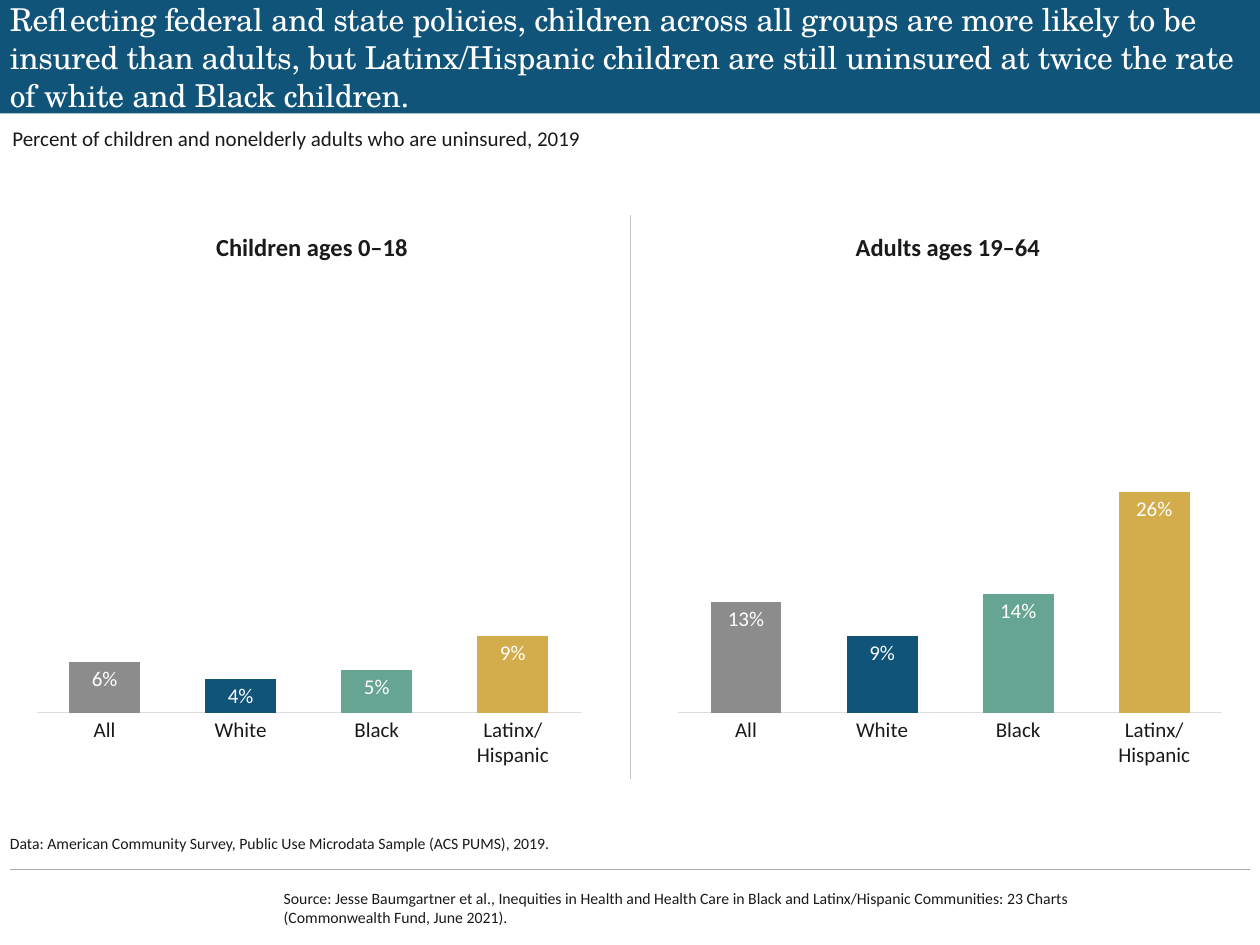
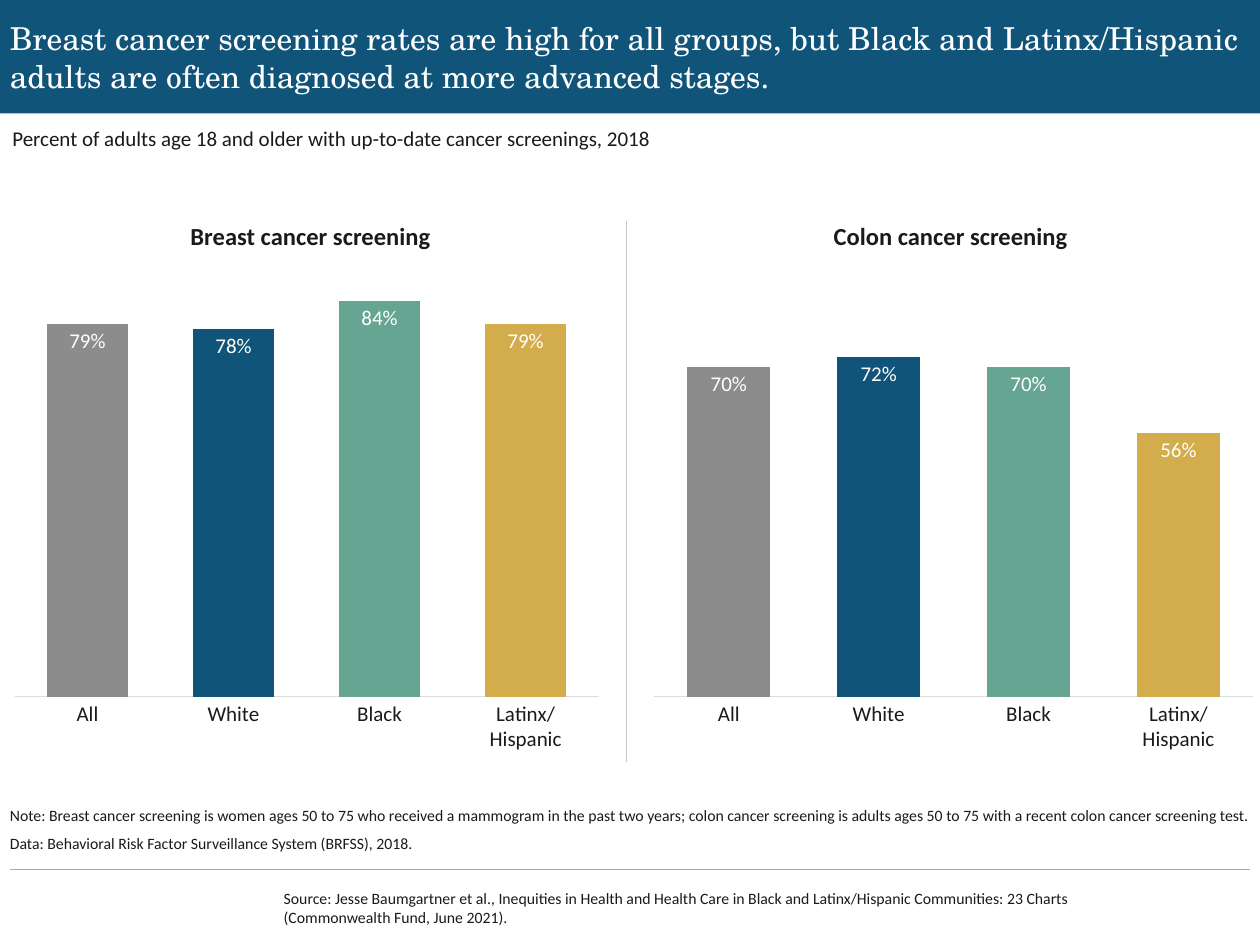
from lxml import etree
from pptx import Presentation
from pptx import util as u
from pptx.chart import data as chart_data
from pptx.dml import color
from pptx.enum import chart as charts, shapes, text
from pptx.oxml import ns

COLORS = {
    "blue": "115479",
    "gray": "8C8C8C",
    "green": "65A591",
    "gold": "D3AC4C",
    "ink": "1A1A1A",
    "white": "FFFFFF",
    "rule": "ABABAB",
    "divider": "C6C6C6",
    "axis": "DDDDDD",
}
GROUPS = {"All": "gray", "White": "blue", "Black": "green", "Latinx/\nHispanic": "gold"}
BODY_FONT = "Calibri"
TITLE_FONT = "TeX Gyre Schola"
SOURCE = (
    "Source: Jesse Baumgartner et al., Inequities in Health and Health Care in Black "
    "and Latinx/Hispanic Communities: 23 Charts (Commonwealth Fund, June 2021)."
)


def rgb(name):
    return color.RGBColor.from_string(COLORS[name])


def style_font(font, size, ink="ink", name=BODY_FONT, bold=False):
    font.size = u.Pt(size)
    font.name = name
    font.bold = bold
    font.color.rgb = rgb(ink)


def add_span(para, words, size=12, ink="ink", name=BODY_FONT, bold=False,
             align=text.PP_ALIGN.LEFT, line_spacing=None, space_after=None, tracking=None):
    para.alignment = align
    para.line_spacing = line_spacing
    para.space_after = space_after
    span = para.add_run()
    span.text = words
    style_font(span.font, size, ink, name, bold)
    if tracking is not None:
        span.font._element.set("spc", str(tracking))


class ChartDeck:
    def __init__(self):
        self.deck = Presentation()
        self.deck.slide_width = u.Cm(25.4)
        self.deck.slide_height = u.Cm(19.05)
        self.page = None

    def add_page(self):
        self.page = self.deck.slides.add_slide(self.deck.slide_layouts[6])
        band = self.page.shapes.add_shape(
            shapes.MSO_SHAPE.RECTANGLE, 0, 0, u.Cm(25.4), u.Cm(2.29))
        band.shadow.inherit = False
        band.fill.solid()
        band.fill.fore_color.rgb = rgb("blue")
        band.line.fill.background()
        self.add_line((25.2, 17.53), (0.2, 17.53), "rule", 0.75)
        self.add_text((5.72, 17.91, 17.91, 0.76), [SOURCE], inset=False,
                      anchor=text.MSO_ANCHOR.MIDDLE, size=9)

    def add_line(self, start, end, ink, width):
        line = self.page.shapes.add_connector(
            shapes.MSO_CONNECTOR.STRAIGHT, *(u.Cm(value) for value in start + end))
        line.line.color.rgb = rgb(ink)
        line.line.width = u.Pt(width)
        etree.SubElement(line._element.spPr, ns.qn("a:effectLst"))

    def add_text(self, area, lines, inset=True, anchor=text.MSO_ANCHOR.TOP, **style):
        box = self.page.shapes.add_textbox(*(u.Cm(value) for value in area))
        frame = box.text_frame
        frame.word_wrap = True
        frame.vertical_anchor = anchor
        if not inset:
            frame.margin_left = frame.margin_right = 0
            frame.margin_top = frame.margin_bottom = 0
        for index, words in enumerate(lines):
            para = frame.add_paragraph() if index else frame.paragraphs[0]
            add_span(para, words, **style)

    def add_title(self, words, tracking=None):
        self.add_text((0.2, 0, 25, 2.29), [words], inset=False,
                      anchor=text.MSO_ANCHOR.MIDDLE, size=18, ink="white",
                      name=TITLE_FONT, tracking=tracking)

    def add_subtitle(self, words):
        self.add_text((0, 2.41, 22.4, 0.76), [words])

    def add_heading(self, area, words):
        self.add_text(area, [words], size=14, bold=True, align=text.PP_ALIGN.CENTER)

    def add_notes(self, lines):
        self.add_text((0.2, 15.82, 25, 1.37), lines, inset=False,
                      anchor=text.MSO_ANCHOR.BOTTOM, size=9, line_spacing=0.9,
                      space_after=u.Pt(6))

    def add_divider(self, x, top, bottom):
        self.add_line((x, top), (x, bottom), "divider", 0.5)

    def add_columns(self, area, values, maximum, gap, plot_area):
        data = chart_data.CategoryChartData()
        data.categories = list(GROUPS)
        data.add_series("Series 1", values)
        chart = self.page.shapes.add_chart(
            charts.XL_CHART_TYPE.COLUMN_CLUSTERED,
            *(u.Cm(value) for value in area), data).chart
        chart.has_legend = False
        chart.has_title = False
        style_font(chart.font, 10)

        value_axis = chart.value_axis
        value_axis.minimum_scale = 0
        value_axis.maximum_scale = maximum
        value_axis.has_major_gridlines = False
        value_axis.visible = False

        category_axis = chart.category_axis
        category_axis.major_tick_mark = charts.XL_TICK_MARK.NONE
        category_axis.format.line.color.rgb = rgb("axis")
        category_axis.format.line.width = u.Pt(0.75)
        style_font(category_axis.tick_labels.font, 12)

        plot = chart.plots[0]
        plot.gap_width = gap
        plot.vary_by_categories = False
        series = plot.series[0]
        series.format.fill.solid()
        series.format.fill.fore_color.rgb = rgb("blue")
        for index, ink in enumerate(GROUPS.values()):
            fill = series.points[index].format.fill
            fill.solid()
            fill.fore_color.rgb = rgb(ink)

        labels = series.data_labels
        labels.show_value = True
        labels.position = charts.XL_LABEL_POSITION.INSIDE_END
        labels.number_format = '#"%"'
        labels.number_format_is_linked = False
        style_font(labels.font, 12, "white")
        self.place_plot(chart, plot_area)

    def place_plot(self, chart, plot_area):
        plot_element = chart._chartSpace.chart.plotArea
        for old_layout in plot_element.findall(ns.qn("c:layout")):
            plot_element.remove(old_layout)
        layout = etree.Element(ns.qn("c:layout"))
        plot_element.insert(0, layout)
        manual = etree.SubElement(layout, ns.qn("c:manualLayout"))
        settings = [("layoutTarget", "inner"), ("xMode", "edge"), ("yMode", "edge")]
        settings += zip("xywh", plot_area)
        for tag, value in settings:
            etree.SubElement(manual, ns.qn(f"c:{tag}"), val=str(value))


def add_uninsured_page(deck):
    deck.add_page()
    deck.add_title(
        "Reflecting federal and state policies, children across all groups are more likely "
        "to be insured than adults, but Latinx/Hispanic children are still uninsured at "
        "twice the rate of white and Black children.", tracking=-20)
    deck.add_subtitle("Percent of children and nonelderly adults who are uninsured, 2019")
    panels = [
        (0.51, 1.91, "Children ages 0–18", (6, 4, 5, 9)),
        (13.44, 14.73, "Adults ages 19–64", (13, 9, 14, 26)),
    ]
    for chart_left, heading_left, heading, values in panels:
        deck.add_columns((chart_left, 3.86, 11.43, 11.81), values, 60, 92,
                         (0.02, 0.02, 0.96, 0.87))
        deck.add_heading((heading_left, 4.55, 8.76, 0.86), heading)
    deck.add_divider(12.7, 4.34, 15.7)
    deck.add_notes([
        "Data: American Community Survey, Public Use Microdata Sample (ACS PUMS), 2019."])


def add_screening_page(deck):
    deck.add_page()
    deck.add_title(
        "Breast cancer screening rates are high for all groups, but Black and "
        "Latinx/Hispanic adults are often diagnosed at more advanced stages.")
    deck.add_subtitle("Percent of adults age 18 and older with up-to-date cancer screenings, 2018")
    panels = [
        (0.05, 12.14, 0.02, 0.97, 1.8, 8.92, "Breast cancer screening", (79, 78, 84, 79)),
        (13.06, 12.22, 0.01, 0.99, 14.91, 8.51, "Colon cancer screening", (70, 72, 70, 56)),
    ]
    for left, width, plot_x, plot_width, heading_left, heading_width, heading, values in panels:
        deck.add_columns((left, 5.18, width, 10.31), values, 90, 80,
                         (plot_x, 0.03, plot_width, 0.83))
        deck.add_heading((heading_left, 4.34, heading_width, 0.86), heading)
    deck.add_divider(12.62, 4.45, 15.37)
    deck.add_notes([
        "Note: Breast cancer screening is women ages 50 to 75 who received a mammogram in "
        "the past two years; colon cancer screening is adults ages 50 to 75 with a recent "
        "colon cancer screening test.",
        "Data: Behavioral Risk Factor Surveillance System (BRFSS), 2018."])


def main():
    deck = ChartDeck()
    add_uninsured_page(deck)
    add_screening_page(deck)
    deck.deck.save("out.pptx")


if __name__ == "__main__":
    main()
